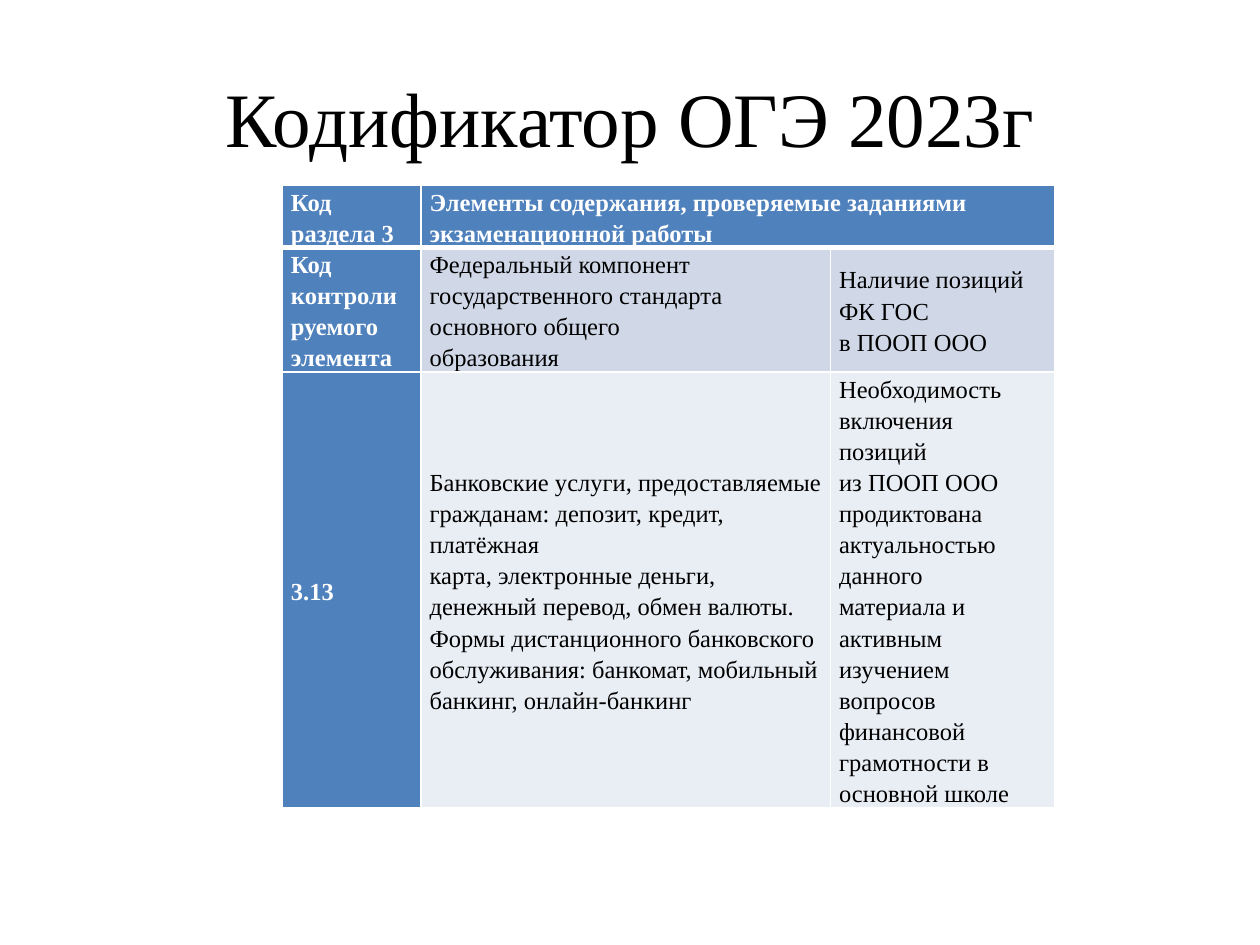
from lxml.etree import SubElement
from pptx import Presentation
from pptx.dml.color import RGBColor
from pptx.enum.text import MSO_ANCHOR, PP_ALIGN
from pptx.oxml.ns import qn
from pptx.util import Pt

COLORS = {"white": "FFFFFF", "black": "000000", "blue": "4F81BD",
          "band": "D0D8E8", "light": "E9EDF4"}
FONT = "Times New Roman"
COLUMN_WIDTHS = [79.2, 234, 128.2]
ROW_HEIGHTS = [35.3, 71.3, 249.1]
ROW_FILLS = ["blue", "band", "light"]
# "\v" breaks a line, "\n" starts a paragraph
ROWS = [
    ["Код\vраздела 3",
     "Элементы содержания, проверяемые заданиями экзаменационной работы",
     ""],
    ["Код\vконтроли\vруемого\vэлемента",
     "Федеральный компонент государственного стандарта основного общего\v"
     "образования",
     "Наличие позиций\vФК ГОС\vв ПООП ООО"],
    ["3.13",
     "Банковские услуги, предоставляемые гражданам: депозит, кредит, платёжная\v"
     "карта, электронные деньги, денежный перевод, обмен валюты. "
     "Формы дистанционного банковского обслуживания: банкомат, "
     "мобильный банкинг, онлайн-банкинг",
     "Необходимость\vвключения позиций\vиз ПООП ООО\vпродиктована\n"
     "актуальностью\n"
     "данного\vматериала и\n"
     "активным изучением\n"
     "вопросов финансовой\vграмотности в\vосновной школе"],
]


def format_font(font, size, color, bold=False):
    font.name = FONT
    font.size = Pt(size)
    font.bold = bold
    font.color.rgb = RGBColor.from_string(COLORS[color])


def add_borders(cell, widths):
    """Draw white borders; widths are left, right, top, bottom in points."""
    properties = cell._tc.get_or_add_tcPr()
    for side, width in zip("LRTB", widths):
        line = SubElement(properties, qn(f"a:ln{side}"), w=str(Pt(width)))
        fill = SubElement(line, qn("a:solidFill"))
        SubElement(fill, qn("a:srgbClr"), val=COLORS["white"])


deck = Presentation()
deck.slide_width, deck.slide_height = Pt(720), Pt(540)
page = deck.slides.add_slide(deck.slide_layouts[5])

title = page.shapes.title
title.left, title.top, title.width, title.height = Pt(36), Pt(21.6), Pt(648), Pt(90)
title.text_frame.text = "Кодификатор ОГЭ 2023г"
title.text_frame.vertical_anchor = MSO_ANCHOR.MIDDLE
heading = title.text_frame.paragraphs[0]
heading.alignment = PP_ALIGN.CENTER
format_font(heading.runs[0].font, 44, "black")

table = page.shapes.add_table(
    len(ROWS), len(COLUMN_WIDTHS), Pt(161.3), Pt(105.8),
    Pt(sum(COLUMN_WIDTHS)), Pt(sum(ROW_HEIGHTS))).table
table.first_col = True
for column, width in zip(table.columns, COLUMN_WIDTHS):
    column.width = Pt(width)
for row, height in zip(table.rows, ROW_HEIGHTS):
    row.height = Pt(height)
table.cell(0, 1).merge(table.cell(0, 2))

for r, texts in enumerate(ROWS):
    for c, text in enumerate(texts):
        cell = table.cell(r, c)
        is_header = r == 0 or c == 0
        add_borders(cell, [1, 1, 3 if r == 1 else 1, 3 if r == 0 else 1])
        cell.fill.solid()
        fill = "blue" if is_header else ROW_FILLS[r]
        cell.fill.fore_color.rgb = RGBColor.from_string(COLORS[fill])
        cell.vertical_anchor = MSO_ANCHOR.MIDDLE
        cell.margin_left = cell.margin_right = Pt(5)
        cell.margin_top = cell.margin_bottom = 0
        if cell.is_spanned:
            continue
        cell.text_frame.text = text
        for para in cell.text_frame.paragraphs:
            para.line_spacing = 1.15
            format_font(para.font, 14, "white" if is_header else "black", is_header)
            for span in para.runs:
                format_font(span.font, 14, "white" if is_header else "black", is_header)

deck.save("out.pptx")
